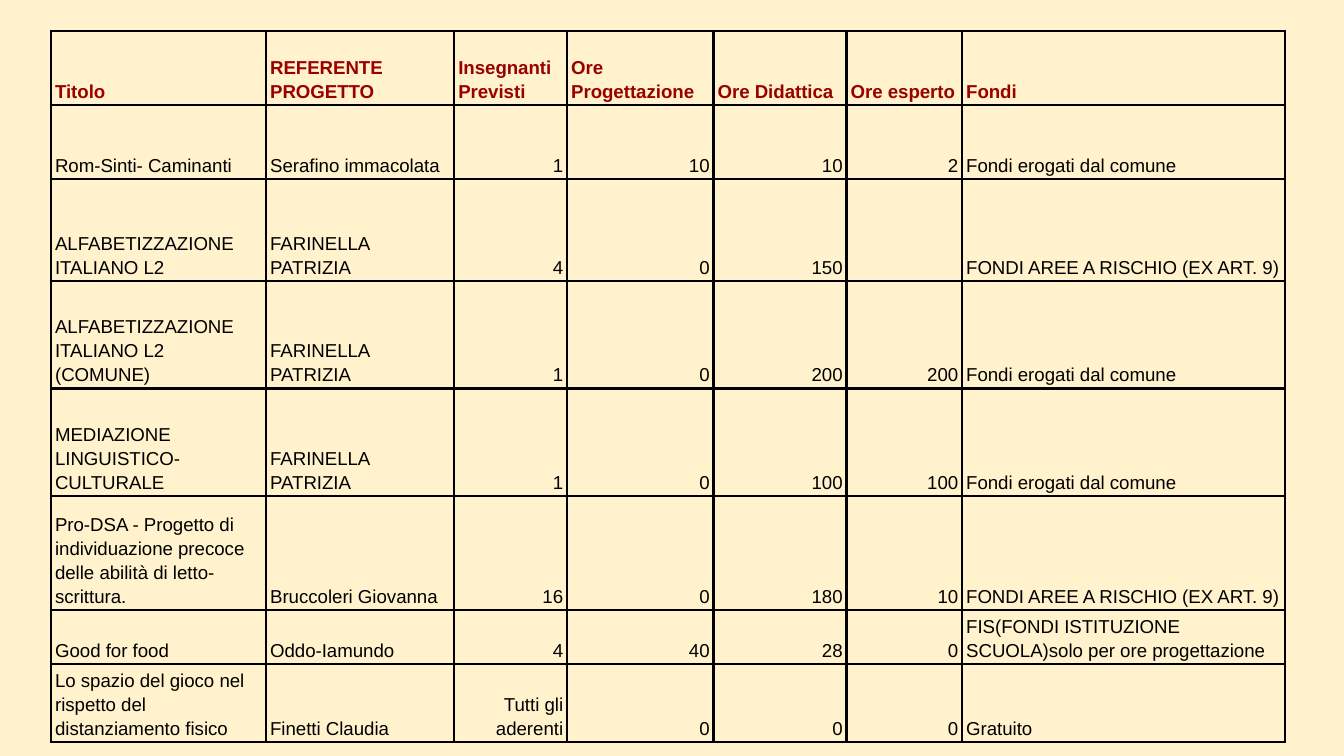
from dataclasses import dataclass
from typing import Any

from lxml import etree
from pptx import Presentation
from pptx.dml.color import RGBColor
from pptx.enum.text import MSO_ANCHOR, PP_ALIGN
from pptx.oxml.ns import qn
from pptx.util import Inches, Pt

BOTTOM = MSO_ANCHOR.BOTTOM
LEFT = PP_ALIGN.LEFT
RIGHT = PP_ALIGN.RIGHT

CREAM = RGBColor(0xFF, 0xF2, 0xCC)
DARK_RED = RGBColor(0x99, 0x00, 0x00)
BLACK = RGBColor(0x00, 0x00, 0x00)

PAGE_WIDTH = Inches(10)
PAGE_HEIGHT = PAGE_WIDTH * 9 // 16

BORDER_SIDES = ("a:lnL", "a:lnR", "a:lnT", "a:lnB")
BORDER_WIDTH = Pt(1.5)
NUMBER_COLUMNS = range(2, 6)
COLUMN_WIDTHS = (1.6, 1.4, 0.84, 1.09, 0.99, 0.86, 2.4)
TABLE_LEFT = 0.38
TABLE_TOP = 0.23

CELL_FORMAT = {
    "vertical_anchor": BOTTOM,
    "margin_left": Inches(0.03),
    "margin_right": Inches(0.03),
    "margin_top": Inches(0.02),
    "margin_bottom": Inches(0.02),
}
HEADER_FONT = {"name": "Arial", "size": Pt(10), "bold": True}
BODY_FONT = {**HEADER_FONT, "bold": False}
TABLE_FLAGS = {"first_row": False, "horz_banding": False}


@dataclass(frozen=True)
class Row:
    height: float
    texts: tuple[str, ...]


COMUNE = "Fondi erogati dal comune"
RISCHIO = "FONDI AREE A RISCHIO (EX ART. 9)"
FARINELLA = "FARINELLA PATRIZIA"

ROWS = (
    Row(0.55, ("Titolo", "REFERENTE PROGETTO", "Insegnanti Previsti",
               "Ore Progettazione", "Ore Didattica", "Ore esperto", "Fondi")),
    Row(0.55, ("Rom-Sinti- Caminanti", "Serafino immacolata",
               "1", "10", "10", "2", COMUNE)),
    Row(0.76, ("ALFABETIZZAZIONE ITALIANO L2", FARINELLA,
               "4", "0", "150", "", RISCHIO)),
    Row(0.8, ("ALFABETIZZAZIONE ITALIANO L2 (COMUNE)", FARINELLA,
              "1", "0", "200", "200", COMUNE)),
    Row(0.8, ("MEDIAZIONE LINGUISTICO-CULTURALE", FARINELLA,
              "1", "0", "100", "100", COMUNE)),
    Row(0.85, ("Pro-DSA - Progetto di individuazione precoce delle abilità di letto-scrittura.",
               "Bruccoleri Giovanna", "16", "0", "180", "10", RISCHIO)),
    Row(0.4, ("Good for food", "Oddo-Iamundo", "4", "40", "28", "0",
              "FIS(FONDI ISTITUZIONE SCUOLA)solo per ore progettazione")),
    Row(0.58, ("Lo spazio del gioco nel rispetto del distanziamento fisico",
               "Finetti Claudia", "Tutti gli aderenti", "0", "0", "0", "Gratuito")),
)


def apply_format(target: Any, values: dict[str, Any]) -> None:
    for name, value in values.items():
        setattr(target, name, value)


def draw_borders(cell: Any) -> None:
    properties = cell._tc.get_or_add_tcPr()
    for side in BORDER_SIDES:
        line = etree.SubElement(properties, qn(side), w=str(BORDER_WIDTH))
        fill = etree.SubElement(line, qn("a:solidFill"))
        etree.SubElement(fill, qn("a:srgbClr"), val=str(BLACK))


def fill_cell(cell: Any, text: str, is_header: bool, is_number: bool) -> None:
    apply_format(cell, CELL_FORMAT)
    draw_borders(cell)
    cell.fill.background()
    para = cell.text_frame.paragraphs[0]
    para.line_spacing = 1.15
    para.alignment = RIGHT if is_number and not is_header else LEFT
    if text:
        span = para.add_run()
        span.text = text
        apply_format(span.font, HEADER_FONT if is_header else BODY_FONT)
        span.font.color.rgb = DARK_RED if is_header else BLACK


def draw_projects(page: Any) -> None:
    frame = page.shapes.add_table(
        len(ROWS), len(COLUMN_WIDTHS), Inches(TABLE_LEFT), Inches(TABLE_TOP),
        Inches(sum(COLUMN_WIDTHS)), Inches(sum(row.height for row in ROWS)))
    table = frame.table
    apply_format(table, TABLE_FLAGS)
    for column, width in zip(table.columns, COLUMN_WIDTHS):
        column.width = Inches(width)
    for row_index, row in enumerate(ROWS):
        table.rows[row_index].height = Inches(row.height)
        for column_index, text in enumerate(row.texts):
            fill_cell(table.cell(row_index, column_index), text,
                      row_index == 0, column_index in NUMBER_COLUMNS)


def main() -> None:
    deck = Presentation()
    deck.slide_width = PAGE_WIDTH
    deck.slide_height = PAGE_HEIGHT
    page = deck.slides.add_slide(deck.slide_layouts[6])
    page.background.fill.solid()
    page.background.fill.fore_color.rgb = CREAM
    draw_projects(page)
    deck.save("out.pptx")


if __name__ == "__main__":
    main()
